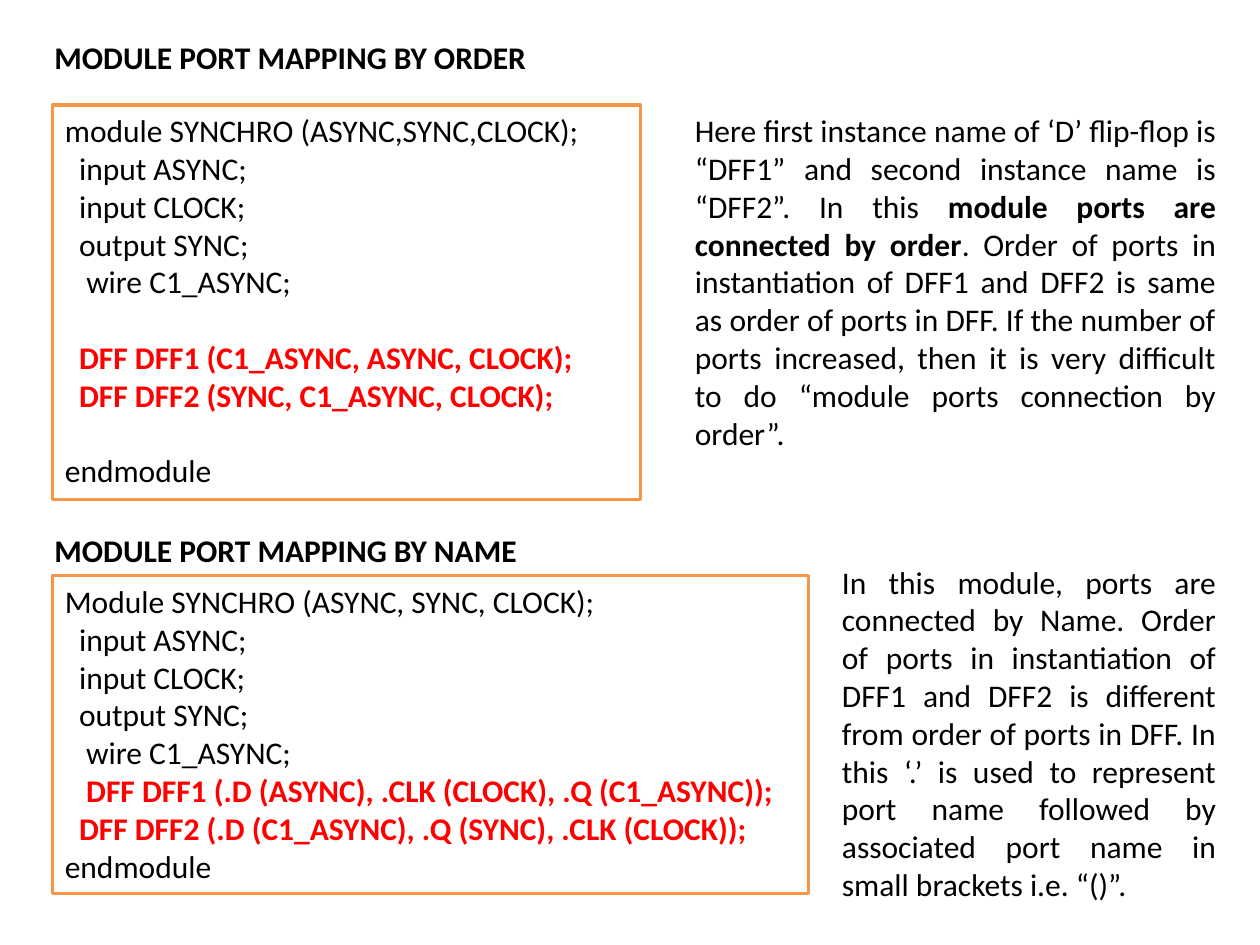
from pptx import Presentation
from pptx.dml.color import RGBColor
from pptx.enum.shapes import MSO_SHAPE
from pptx.enum.text import MSO_ANCHOR, MSO_AUTO_SIZE, PP_ALIGN
from pptx.util import Pt

RECTANGLE = MSO_SHAPE.RECTANGLE
TOP = MSO_ANCHOR.TOP
GROW = MSO_AUTO_SIZE.SHAPE_TO_FIT_TEXT
LEFT = PP_ALIGN.LEFT
JUSTIFY = PP_ALIGN.JUSTIFY

BLACK, RED, WHITE, ORANGE = "000000", "FF0000", "FFFFFF", "F79646"
SPACE_WIDTH = 4.07
LINE_HEIGHT = 21.6

ORDER_CODE = [
    (0, 0, "module SYNCHRO (ASYNC,SYNC,CLOCK);", False),
    (2, 0, "input ASYNC;", False),
    (2, 0, "input CLOCK;", False),
    (2, 0, "output SYNC;", False),
    (3, 0, "wire C1_ASYNC;", False),
    (2, 1, "DFF DFF1 (C1_ASYNC, ASYNC, CLOCK);", True),
    (2, 0, "DFF DFF2 (SYNC, C1_ASYNC, CLOCK);", True),
    (0, 1, "endmodule", False),
]
NAME_CODE = [
    (0, 0, "Module SYNCHRO (ASYNC, SYNC, CLOCK);", False),
    *ORDER_CODE[1:5],
    (3, 0, "DFF DFF1 (.D (ASYNC), .CLK (CLOCK), .Q (C1_ASYNC));", True),
    (2, 0, "DFF DFF2 (.D (C1_ASYNC), .Q (SYNC), .CLK (CLOCK));", True),
    (0, 0, "endmodule", False),
]
ORDER_NOTE = [
    ("Here first instance name of ‘D’ flip-flop is “DFF1” and second instance "
     "name is “DFF2”. In this ", False),
    ("module ports are connected by order", True),
    (". Order of ports in instantiation of DFF1 and DFF2 is same as order of "
     "ports in DFF. If the number of ports increased, then it is very difficult "
     "to do “module ports connection by order”.", False),
]
NAME_NOTE = [
    ("In this module, ports are connected by Name. Order of ports in "
     "instantiation of DFF1 and DFF2 is different from order of ports in DFF. "
     "In this ‘.’ is used to represent port name followed by associated port "
     "name in small brackets i.e. “()”.", False),
]


def color(hex_value):
    return RGBColor.from_string(hex_value)


def apply_format(target, values):
    for name, value in values.items():
        setattr(target, name, value)


def add_run(paragraph, text, bold=False, ink=BLACK):
    run = paragraph.add_run()
    run.text = text
    apply_format(run.font, {"name": "Calibri", "size": Pt(18), "bold": bold})
    run.font.color.rgb = color(ink)


def add_frame(slide, box, wrap=True):
    frame = slide.shapes.add_textbox(*map(Pt, box)).text_frame
    apply_format(frame, {"word_wrap": wrap, "auto_size": GROW})
    return frame


def add_heading(slide, box, text):
    add_run(add_frame(slide, box, wrap=False).paragraphs[0], text, bold=True)


def add_code(slide, box, lines):
    panel = slide.shapes.add_shape(RECTANGLE, *map(Pt, box))
    panel.shadow.inherit = False
    panel.fill.solid()
    panel.fill.fore_color.rgb = color(WHITE)
    panel.line.color.rgb = color(ORANGE)
    panel.line.width = Pt(2)
    frame = panel.text_frame
    apply_format(frame, {"word_wrap": True, "auto_size": GROW,
                         "vertical_anchor": TOP})
    for index, (spaces, gap_lines, text, instance) in enumerate(lines):
        paragraph = frame.add_paragraph() if index else frame.paragraphs[0]
        apply_format(paragraph, {"alignment": LEFT,
                                 "space_before": Pt(gap_lines * LINE_HEIGHT)})
        paragraph._p.get_or_add_pPr().set("marL", str(Pt(spaces * SPACE_WIDTH)))
        add_run(paragraph, text, instance, RED if instance else BLACK)


def add_note(slide, box, parts):
    paragraph = add_frame(slide, box).paragraphs[0]
    paragraph.alignment = JUSTIFY
    for text, bold in parts:
        add_run(paragraph, text, bold)


def add_section(slide, box, heading, code_box, code, note_box, note):
    left, top, width, height = box

    def place(part):
        return left + part[0], top + part[1], part[2], part[3]

    add_heading(slide, (left, top, width, height), heading)
    add_code(slide, place(code_box), code)
    add_note(slide, place(note_box), note)


def main():
    deck = Presentation()
    deck.slide_width, deck.slide_height = Pt(720), Pt(540)
    slide = deck.slides.add_slide(deck.slide_layouts[6])
    add_section(slide, (24, 18, 287, 29), "MODULE PORT MAPPING BY ORDER",
                (6, 42, 336, 225.5), ORDER_CODE,
                (366, 42, 312, 204), ORDER_NOTE)
    add_section(slide, (24, 300, 281.5, 29), "MODULE PORT MAPPING BY NAME",
                (6, 29, 432, 181.5), NAME_CODE,
                (450, 18, 228, 204), NAME_NOTE)
    deck.save("out.pptx")


if __name__ == "__main__":
    main()
